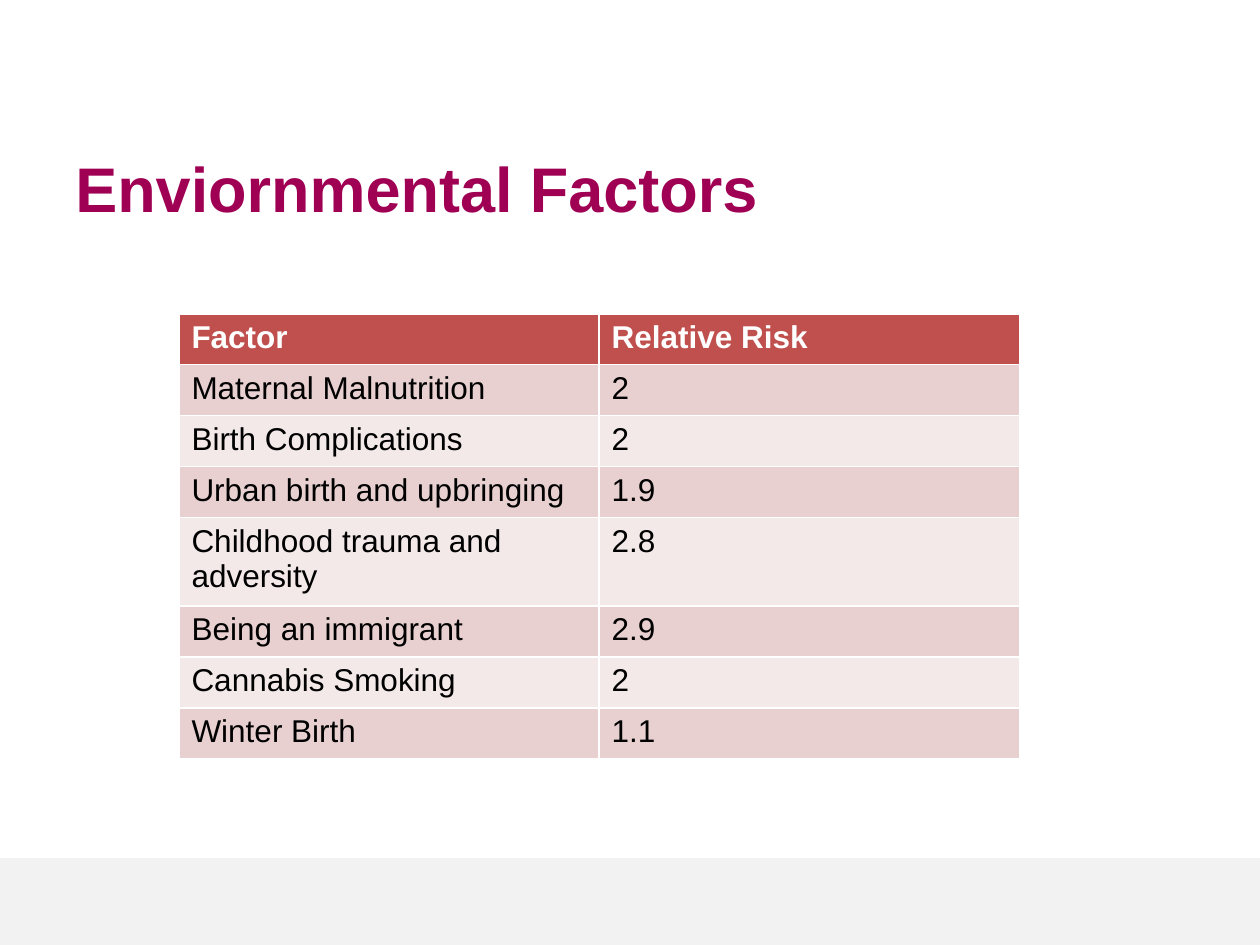
"""Build a slide with a table of environmental risk factors."""
from pptx import Presentation
from pptx.dml.color import RGBColor
from pptx.enum.shapes import MSO_SHAPE
from pptx.enum.text import MSO_ANCHOR
from pptx.util import Inches, Pt

RECT = MSO_SHAPE.RECTANGLE
MIDDLE = MSO_ANCHOR.MIDDLE

TITLE = "Enviornmental Factors"
ROWS = [
    ("Factor", "Relative Risk"),
    ("Maternal Malnutrition", "2"),
    ("Birth Complications", "2"),
    ("Urban birth and upbringing", "1.9"),
    ("Childhood trauma and adversity", "2.8"),
    ("Being an immigrant", "2.9"),
    ("Cannabis Smoking", "2"),
    ("Winter Birth", "1.1"),
]
COLORS = {
    "title": "A00054",
    "head": "C0504D",
    "odd": "E8D0D0",
    "even": "F4E9E9",
    "footer": "F2F2F2",
    "white": "FFFFFF",
    "black": "000000",
}


def color(name):
    return RGBColor.from_string(COLORS[name])


def paint(item, name):
    item.fill.solid()
    item.fill.fore_color.rgb = color(name)


def write(frame, text, size=18, ink="black", bold=False):
    frame.word_wrap = True
    run = frame.paragraphs[0].add_run()
    run.text = text
    run.font.name = "Arial"
    run.font.size = Pt(size)
    run.font.bold = bold
    run.font.color.rgb = color(ink)


def box(left, top, width, height):
    return [Inches(n) for n in (left, top, width, height)]


def main():
    deck = Presentation()
    deck.slide_width, deck.slide_height = Inches(10), Inches(7.5)
    slide = deck.slides.add_slide(deck.slide_layouts[6])
    shapes = slide.shapes

    footer = shapes.add_shape(RECT, *box(0, 6.81, 10, 0.69))
    footer.shadow.inherit = False
    footer.line.fill.background()
    paint(footer, "footer")

    title = shapes.add_textbox(*box(0.5, 1.12, 8.5, 0.74)).text_frame
    title.vertical_anchor = MIDDLE
    write(title, TITLE, size=36, ink="title", bold=True)

    place = box(1.42, 2.49, 6.67, 3.24)
    table = shapes.add_table(len(ROWS), len(ROWS[0]), *place).table
    for r, row in enumerate(ROWS):
        head = r == 0
        fill = "head" if head else "odd" if r % 2 else "even"
        for c, text in enumerate(row):
            cell = table.cell(r, c)
            paint(cell, fill)
            write(cell.text_frame, text, ink="white" if head else "black", bold=head)

    deck.save("out.pptx")


if __name__ == "__main__":
    main()
